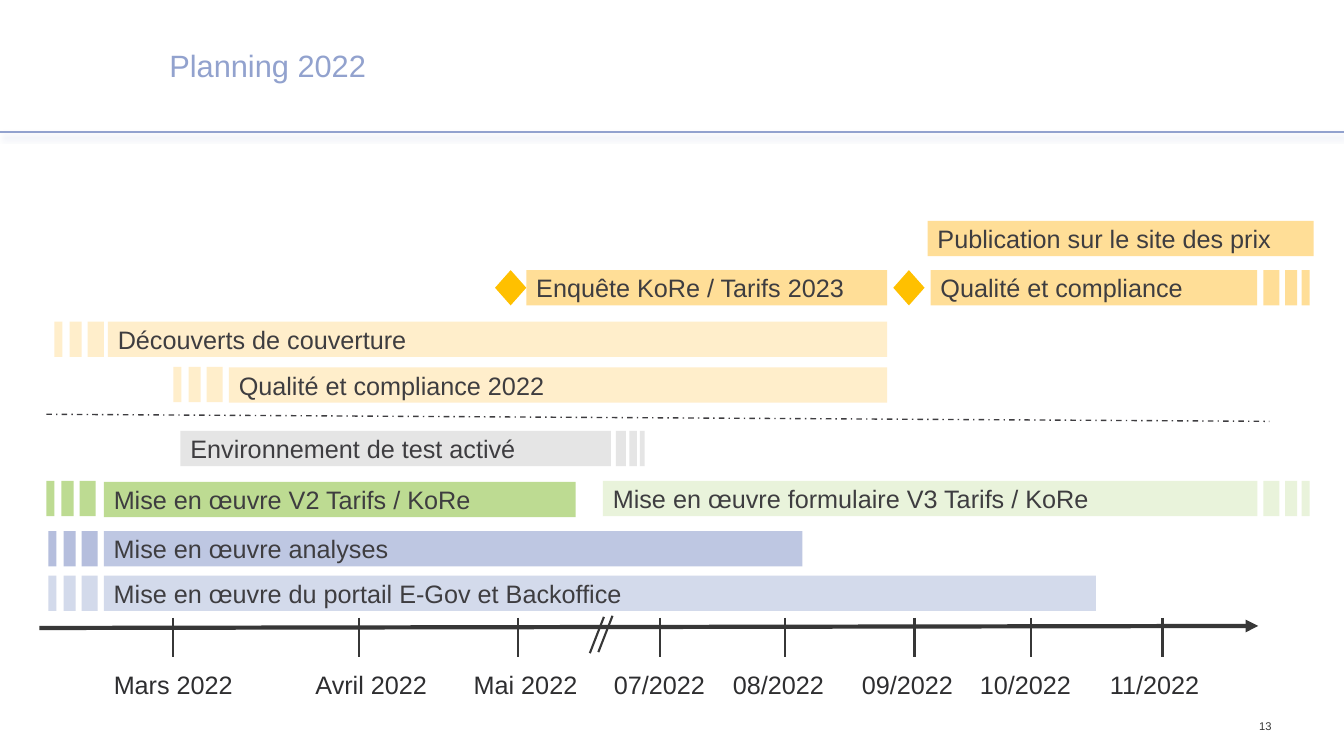
import pptx
import pptx.util
import pptx.dml.color
import pptx.enum.dml
import pptx.enum.shapes
import pptx.enum.text
import pptx.oxml
import pptx.oxml.ns

MSO_SHAPE = pptx.enum.shapes.MSO_SHAPE
ALIGN = pptx.enum.text.PP_ALIGN
CELL = pptx.util.Inches(0.1)  # all lengths are columns and rows of this grid
COLOURS = {
    "title": "92A2CE", "axis": "373737", "month": "2E2E30", "label": "3E3D40",
    "milestone": "FFC000", "survey": "FFDE97", "cover": "FFEECB",
    "test": "E5E5E5", "v2": "BDDB92", "v3": "E9F3DB",
    "analysis": "BEC7E2", "analysis fade": "B5BEDD", "portal": "D3DAEB",
}
BAR_HEIGHT = 3.5

deck = pptx.Presentation()
deck.slide_width = pptx.util.Inches(13.33)
deck.slide_height = pptx.util.Inches(7.5)
slide = deck.slides.add_slide(deck.slide_layouts[5])


def write(frame, text, size, colour, align=ALIGN.LEFT):
    frame.vertical_anchor = pptx.enum.text.MSO_ANCHOR.MIDDLE
    paragraph = frame.paragraphs[0]
    paragraph.alignment = align
    run = paragraph.add_run()
    run.text = text
    run.font.name = "Arial"
    run.font.size = pptx.util.Pt(size)
    run.font.color.rgb = pptx.dml.color.RGBColor.from_string(COLOURS[colour])


def draw_line(start, end, colour, weight):
    """Draw a line between two grid points, with an empty effect list."""
    ends = [round(value * CELL) for value in (*start, *end)]
    line = slide.shapes.add_connector(pptx.enum.shapes.MSO_CONNECTOR.STRAIGHT, *ends)
    line.line.color.rgb = pptx.dml.color.RGBColor.from_string(COLOURS[colour])
    line.line.width = pptx.util.Pt(weight)
    effects = pptx.oxml.parse_xml(f'<a:effectLst {pptx.oxml.ns.nsdecls("a")}/>')
    line._element.spPr.append(effects)
    return line, effects


# Header
rule, rule_effects = draw_line((0, 13.1), (133.3, 13.1), "title", 2)
rule_effects.append(pptx.oxml.parse_xml(
    f'<a:outerShdw {pptx.oxml.ns.nsdecls("a")} blurRad="50800" dist="38100" '
    f'dir="4620000" rotWithShape="0"><a:srgbClr val="{COLOURS["title"]}">'
    '<a:alpha val="30000"/></a:srgbClr></a:outerShdw>'))

title = slide.shapes.title
title.left, title.top, title.width, title.height = (
    round(value * CELL) for value in (16.8, 2.3, 110.3, 8.8))
title.text_frame.margin_left = 0
title.text_frame.word_wrap = True
write(title.text_frame, "Planning 2022", 22, "title")
title.text_frame.paragraphs[0].line_spacing = 0.9

page = slide.shapes.add_textbox(*(round(v * CELL) for v in (118.4, 70.6, 8.7, 2.9)))
page.text_frame.word_wrap = True
write(page.text_frame, "13", 8, "axis", ALIGN.RIGHT)

# Time axis: month, tick column, label column, label width
axis, _ = draw_line((3.9, 62.3), (124.8, 62.1), "axis", 3)
axis.line._get_or_add_ln().append(pptx.oxml.parse_xml(
    f'<a:tailEnd {pptx.oxml.ns.nsdecls("a")} type="triangle"/>'))

for month, tick, left, width in (
    ("Mars 2022", 17.2, 10.3, 13.9),
    ("Avril 2022", 35.6, 30.3, 13.2),
    ("Mai 2022", 51.4, 46, 12.4),
    ("07/2022", 65.5, 59.9, 11.1),
    ("08/2022", 77.9, 71.7, 11.1),
    ("09/2022", 90.7, 84.5, 11.1),
    ("10/2022", 102.3, 96.2, 11.1),
    ("11/2022", 115.3, 109.1, 10.9),
):
    draw_line((tick, 61.3), (tick, 65.2), "axis", 1.5)
    month_box = slide.shapes.add_textbox(*(round(v * CELL) for v in (left, 65.9, width, 4)))
    month_box.text_frame.word_wrap = False
    write(month_box.text_frame, month, 18, "month")

for shift in (0, 0.85):  # break in the axis
    draw_line((59.9 + shift, 61.2 - shift / 8), (58.5 + shift, 64.8 - shift / 8), "axis", 1.5)

separator, _ = draw_line((4.6, 41.1), (125.9, 41.8), "label", 1)
separator.line.dash_style = pptx.enum.dml.MSO_LINE.DASH_DOT

# Blocks: shape, column, row, width, colour, label
blocks = [
    (MSO_SHAPE.DIAMOND, 49.1, 26.8, 3.1, "milestone", ""),
    (MSO_SHAPE.DIAMOND, 88.6, 26.8, 3.1, "milestone", ""),
]
for left, row, width, colour, label in (
    (92, 21.9, 38.3, "survey", "Publication sur le site des prix"),
    (52.2, 26.8, 35.8, "survey", "Enquête KoRe / Tarifs 2023"),
    (92.3, 26.8, 32.4, "survey", "Qualité et compliance"),
    (10.7, 31.9, 77.3, "cover", "Découverts de couverture"),
    (22.7, 36.45, 65.3, "cover", "Qualité et compliance 2022"),
    (17.9, 42.75, 42.7, "test", "Environnement de test activé"),
    (10.3, 47.8, 46.8, "v2", "Mise en œuvre V2 Tarifs / KoRe"),
    (59.8, 47.7, 64.9, "v3", "Mise en œuvre formulaire V3 Tarifs / KoRe"),
    (10.3, 52.7, 69.3, "analysis", "Mise en œuvre analyses"),
    (10.3, 57.1, 98.4, "portal", "Mise en œuvre du portail E-Gov et Backoffice"),
):
    blocks.append((MSO_SHAPE.RECTANGLE, left, row, width, colour, label))

# Fading stripes: offset and width, growing before a bar and shrinking after it
fade_in = ((0, 0.8), (1.5, 1.2), (3.3, 1.6))
fade_out = ((0, 1.6), (2.15, 1.2), (3.8, 0.8))
for left, row, colour, stripes, scale in (
    (5.4, 31.9, "cover", fade_in, 1),
    (17.2, 36.4, "cover", fade_in, 1),
    (4.6, 47.7, "v2", fade_in, 1),
    (4.8, 52.7, "analysis fade", fade_in, 1),
    (4.8, 57.1, "portal", fade_in, 1),
    (125.3, 26.8, "survey", fade_out, 1),
    (125.3, 47.7, "v3", fade_out, 1),
    (61.1, 42.75, "test", fade_out, 0.62),
):
    for offset, width in stripes:
        blocks.append((MSO_SHAPE.RECTANGLE, left + offset * scale, row, width * scale, colour, ""))

for outline, left, row, width, colour, label in blocks:
    block = slide.shapes.add_shape(
        outline, *(round(value * CELL) for value in (left, row, width, BAR_HEIGHT)))
    block.shadow.inherit = False
    block.fill.solid()
    block.fill.fore_color.rgb = pptx.dml.color.RGBColor.from_string(COLOURS[colour])
    block.line.fill.background()
    if label:
        block.text_frame.word_wrap = True
        write(block.text_frame, label, 18, "label")

deck.save("out.pptx")
